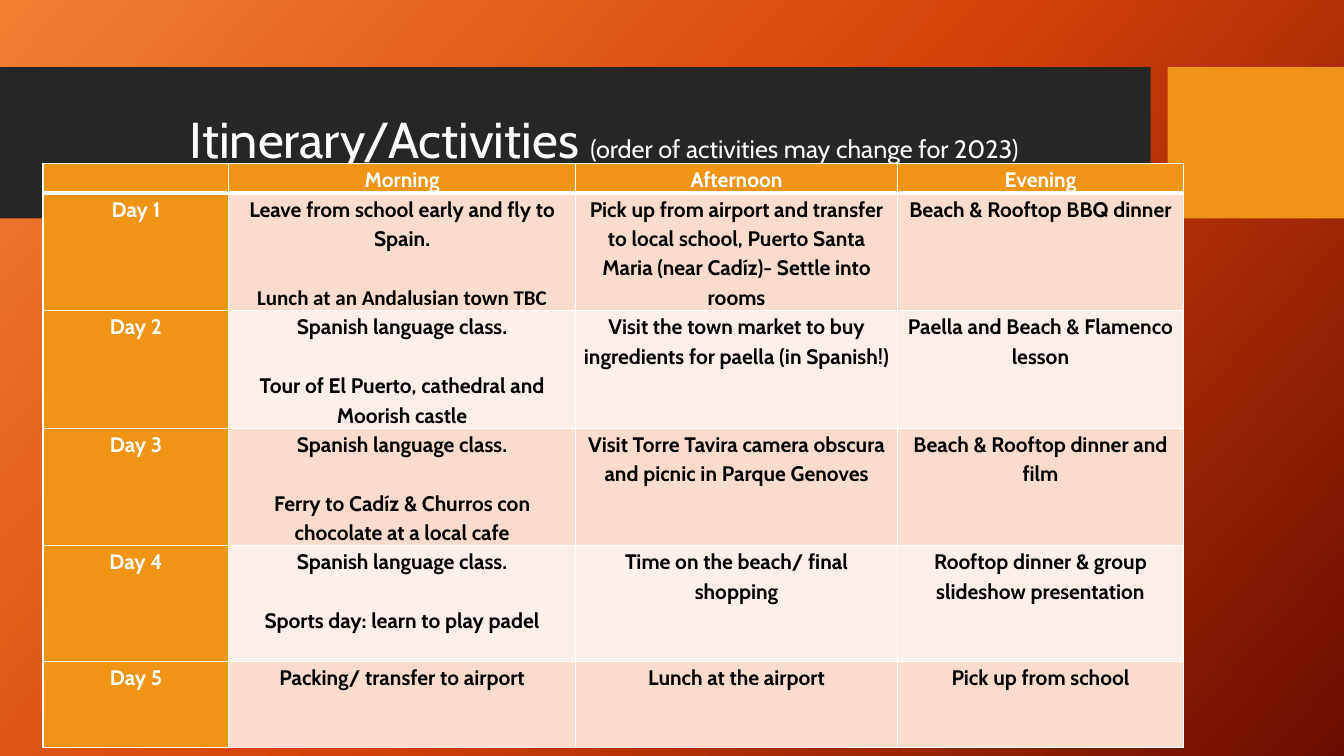
from copy import deepcopy

from lxml.etree import SubElement
from pptx import Presentation
from pptx.dml.color import RGBColor
from pptx.enum.shapes import MSO_SHAPE
from pptx.enum.text import MSO_ANCHOR, MSO_AUTO_SIZE, PP_ALIGN
from pptx.oxml.ns import qn
from pptx.util import Emu, Pt

EMU_PER_PX = 9525
COLOURS = {
    "band": "262626", "accent": "F09415", "white": "FFFFFF", "black": "000000",
    "odd_day": "F9DCCC", "even_day": "FCEEE8",
    "glow": "F18031", "flame": "D54209", "ember": "6A0D00",
}
COLUMN_WIDTHS = [177, 330, 307, 272]
ROW_HEIGHTS = [26] + [110] * 4 + [82]
LINE_GAP = 21

# Each cell is a list of paragraphs.
ITINERARY = [
    [[], ["Morning"], ["Afternoon"], ["Evening"]],
    [["Day 1"],
     ["Leave from school early and fly to Spain.", "Lunch at an Andalusian town TBC"],
     ["Pick up from airport and transfer to local school, Puerto Santa Maria "
      "(near Cadíz)- Settle into rooms"],
     ["Beach & Rooftop BBQ dinner"]],
    [["Day 2"],
     ["Spanish language class.", "Tour of El Puerto, cathedral and Moorish castle"],
     ["Visit the town market to buy ingredients for paella (in Spanish!)"],
     ["Paella and Beach & Flamenco lesson"]],
    [["Day 3"],
     ["Spanish language class.", "Ferry to Cadíz & Churros con chocolate at a local cafe"],
     ["Visit Torre Tavira camera obscura and picnic in Parque Genoves"],
     ["Beach & Rooftop dinner and film"]],
    [["Day 4"],
     ["Spanish language class.", "Sports day: learn to play padel"],
     ["Time on the beach/ final shopping"],
     ["Rooftop dinner & group slideshow presentation"]],
    [["Day 5"],
     ["Packing/ transfer to airport"],
     ["Lunch at the airport"],
     ["Pick up from school"]],
]
CALIBRI_LINES = {"Lunch at an Andalusian town TBC"}


def px(length):
    return Emu(length * EMU_PER_PX)


def rgb(name):
    return RGBColor.from_string(COLOURS[name])


def apply(target, **values):
    for name, value in values.items():
        setattr(target, name, value)


class SlideBuilder:
    def __init__(self, presentation, font):
        self.font = font
        self.slide = presentation.slides.add_slide(presentation.slide_layouts[5])

    def background(self, stops, clockwise_angle):
        fill = self.slide.background.fill
        fill.gradient()
        fill.gradient_angle = 360 - clockwise_angle
        stop_list = next(self.slide.element.iter(qn("a:gsLst")))
        while len(stop_list) < len(stops):
            stop_list.append(deepcopy(stop_list[-1]))
        for stop, (position, colour) in zip(fill.gradient_stops, stops):
            stop.position = position
            stop.color.rgb = rgb(colour)

    def block(self, left, top, width, height, colour):
        block = self.slide.shapes.add_shape(
            MSO_SHAPE.RECTANGLE, px(left), px(top), px(width), px(height))
        block.shadow.inherit = False
        block.fill.solid()
        block.fill.fore_color.rgb = rgb(colour)
        block.line.fill.background()

    def run(self, paragraph, text, size, colour, bold=False, font=None):
        run = paragraph.add_run()
        run.text = text
        apply(run.font, name=font or self.font, size=Pt(size), bold=bold)
        run.font.color.rgb = rgb(colour)

    def title(self, left, top, width, height, parts):
        title = self.slide.shapes.title
        self.slide.shapes._spTree.append(title._element)  # bring above the blocks
        apply(title, left=px(left), top=px(top), width=px(width), height=px(height))
        apply(title.text_frame, word_wrap=True, auto_size=MSO_AUTO_SIZE.NONE,
              vertical_anchor=MSO_ANCHOR.MIDDLE)
        heading = title.text_frame.paragraphs[0]
        apply(heading, alignment=PP_ALIGN.CENTER, line_spacing=0.9)
        for text, size in parts:
            self.run(heading, text, size, "white")

    def border(self, cell, side, points):
        line = SubElement(cell._tc.get_or_add_tcPr(), qn(f"a:ln{side}"), w=str(Pt(points)))
        SubElement(SubElement(line, qn("a:solidFill")), qn("a:srgbClr"), val=COLOURS["white"])

    def cell(self, cell, lines, fill, colour, border_widths):
        apply(cell, margin_left=px(7), margin_right=px(7), margin_top=0, margin_bottom=0)
        for side, points in border_widths.items():
            self.border(cell, side, points)
        cell.fill.solid()
        cell.fill.fore_color.rgb = rgb(fill)
        paragraph = cell.text_frame.paragraphs[0]
        if not lines:
            SubElement(paragraph._p, qn("a:endParaRPr"), sz="1500")
        for index, text in enumerate(lines):
            if index:
                paragraph = cell.text_frame.add_paragraph()
                paragraph.space_before = Pt(LINE_GAP)
            apply(paragraph, alignment=PP_ALIGN.CENTER, line_spacing=1.15)
            font = "Calibri" if text in CALIBRI_LINES else None
            self.run(paragraph, text, 15, colour, bold=True, font=font)

    def itinerary(self, left, top, rows):
        table = self.slide.shapes.add_table(
            len(rows), len(COLUMN_WIDTHS), px(left), px(top),
            px(sum(COLUMN_WIDTHS)), px(sum(ROW_HEIGHTS))).table
        apply(table, first_row=False, horz_banding=False)
        for column, width in zip(table.columns, COLUMN_WIDTHS):
            column.width = px(width)
        for row, height in zip(table.rows, ROW_HEIGHTS):
            row.height = px(height)
        for day, periods in enumerate(rows):
            borders = {"L": 1, "R": 1, "T": 3 if day == 1 else 1, "B": 3 if day == 0 else 1}
            for period, lines in enumerate(periods):
                if day == 0 or period == 0:
                    fill, colour = "accent", "white"
                else:
                    fill, colour = "odd_day" if day % 2 else "even_day", "black"
                self.cell(table.cell(day, period), lines, fill, colour, borders)


def main():
    presentation = Presentation()
    apply(presentation, slide_width=px(1280), slide_height=px(720))
    builder = SlideBuilder(presentation, "Cabin")
    builder.background([(0, "glow"), (0.5, "flame"), (1, "ember")], 42)
    builder.block(0, 64, 1096, 144, "band")
    builder.block(1112, 64, 168, 144, "accent")
    builder.title(71, 79, 1009, 113, [
        ("Itinerary/Activities ", 36),
        ("(order of activities may change for 2023)", 18),
    ])
    builder.itinerary(41, 156, ITINERARY)
    presentation.save("out.pptx")


if __name__ == "__main__":
    main()
